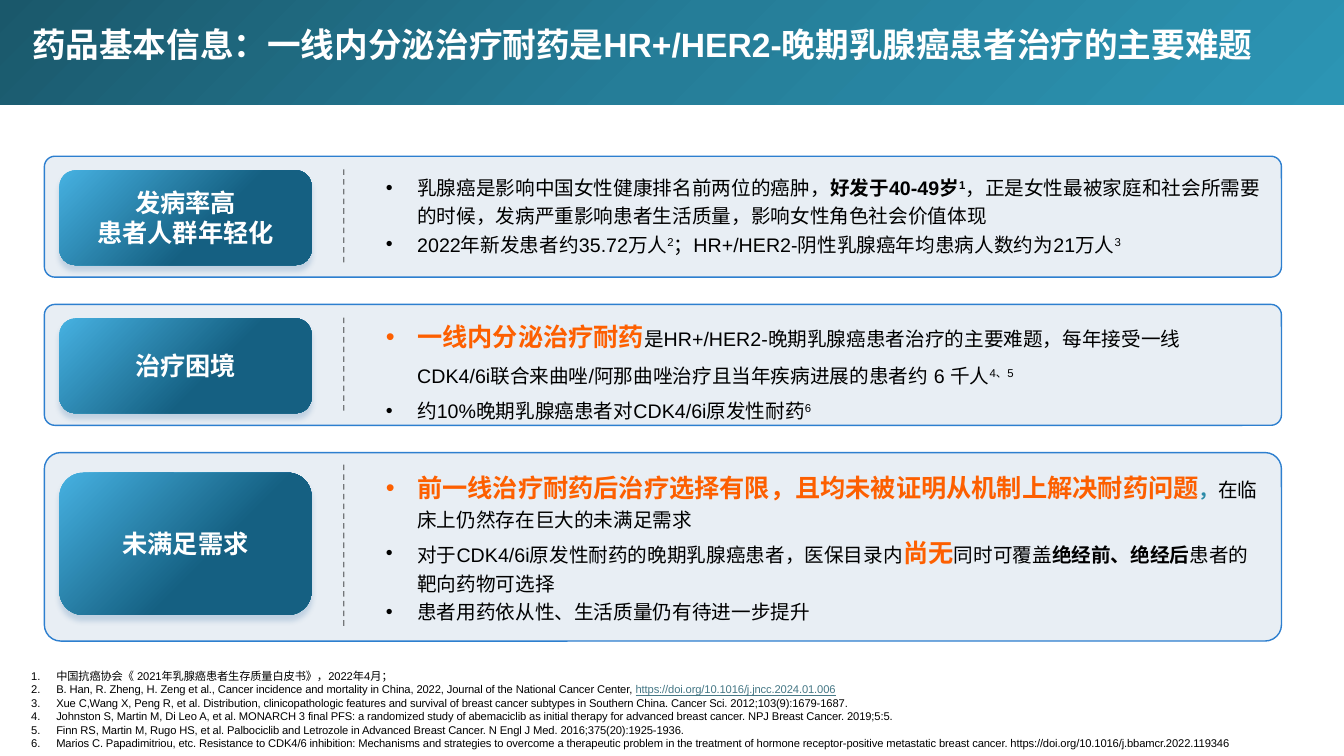
from lxml import etree
from pptx import Presentation
from pptx.dml.color import RGBColor
from pptx.enum.dml import MSO_LINE
from pptx.enum.lang import MSO_LANGUAGE_ID as Language
from pptx.enum.shapes import MSO_CONNECTOR as Connector, MSO_SHAPE as Shape
from pptx.enum.text import MSO_ANCHOR as Anchor, MSO_AUTO_SIZE as AutoSize, PP_ALIGN as Align
from pptx.oxml.ns import qn
from pptx.util import Inches, Pt


def color(value):
    return RGBColor.from_string(value)


def add_text(paragraph, text, size=14, ink="000000", bold=False, superscript=False,
             underline=False, spacing=None):
    run = paragraph.add_run()
    run.text = text
    font = run.font
    font.name, font.size, font.bold = "Arial", Pt(size), bold
    font.color.rgb = color(ink)
    font.language_id = Language.SIMPLIFIED_CHINESE
    properties = run._r.get_or_add_rPr()
    etree.SubElement(properties, qn("a:ea"), typeface="Arial")
    if underline:
        font.underline = True
    if superscript:
        properties.set("baseline", "30000")
    if spacing is not None:
        properties.set("spc", str(spacing))


bold = {"bold": True}
raised = {"superscript": True}
highlight = {"size": 18, "ink": "FD5F00", "bold": True}
badge_text = {"size": 18, "ink": "FFFFFF", "bold": True}

panels = [
    {"height": 1.2, "badge": (0.14, 0.94), "divider": (0.13, 0.94),
     "body": (1.65, 8.88, 0.92), "line_spacing": 1.2,
     "title": ["发病率高", "患者人群年轻化"],
     "points": [
         [("乳腺癌是影响中国女性健康排名前两位的癌肿，", {}), ("好发于40-49岁", bold),
          ("1", {**bold, **raised}),
          ("，正是女性最被家庭和社会所需要的时候，发病严重影响患者生活质量，影响女性角色社会价值体现", {})],
         [("2022年新发患者约35.72万人", {}), ("2", raised),
          ("；HR+/HER2-阴性乳腺癌年均患病人数约为21万人", {}), ("3", raised)]]},
    {"height": 1.2, "badge": (0.14, 0.94), "divider": (0.13, 0.94),
     "body": (2.99, 8.74, 1.22), "line_spacing": 1.5,
     "title": ["治疗困境"],
     "points": [
         [("一线内分泌治疗耐药", highlight),
          ("是HR+/HER2-晚期乳腺癌患者治疗的主要难题，每年接受一线CDK4/6i联合来曲唑/阿那曲唑治疗"
           "且当年疾病进展的患者约 6 千人", {}), ("4、5", raised)],
         [("约10%晚期乳腺癌患者对CDK4/6i原发性耐药", {}), ("6", raised)]]},
    {"height": 1.87, "badge": (0.2, 1.41), "divider": (0.12, 1.61),
     "body": (4.58, 8.88, 1.65), "line_spacing": 1.2,
     "title": ["未满足需求"],
     "points": [
         [("前一线治疗耐药后治疗选择有限，且均未被证明从机制上解决耐药问题", highlight),
          ("，", {"ink": "2B8BA8", "bold": True}), ("在临床上仍然存在巨大的未满足需求", {})],
         [("对于CDK4/6i原发性耐药的晚期乳腺癌患者，医保目录内", {}), ("尚无", highlight),
          ("同时可覆盖", {}), ("绝经前、绝经后", bold), ("患者的靶向药物可选择", {})],
         [("患者用药依从性、生活质量仍有待进一步提升", {})]]},
]
references = [
    [("中国抗癌协会《 2021年乳腺癌患者生存质量白皮书》，2022年4月；", {})],
    [("B. Han, R. Zheng, H. Zeng et al., Cancer incidence and mortality in China, 2022, "
      "Journal of the National Cancer Center, ", {}),
     ("https://doi.org/10.1016/j.jncc.2024.01.006", {"ink": "467886", "underline": True})],
    [("Xue C,Wang X, Peng R, et al. Distribution, clinicopathologic features and survival of breast "
      "cancer subtypes in Southern China. Cancer Sci. 2012;103(9):1679-1687.", {})],
    [("Johnston S, Martin M, Di Leo A, et al. MONARCH 3 final PFS: a randomized study of abemaciclib "
      "as initial therapy for advanced breast cancer. NPJ Breast Cancer. 2019;5:5. ", {})],
    [("Finn RS, Martin M, Rugo HS, et al. Palbociclib and Letrozole in Advanced Breast Cancer. "
      "N Engl J Med. 2016;375(20):1925-1936.", {})],
    [("Marios C. Papadimitriou, etc. Resistance to CDK4/6 inhibition: Mechanisms and strategies to "
      "overcome a therapeutic problem in the treatment of hormone receptor-positive metastatic breast "
      "cancer. https://doi.org/10.1016/j.bbamcr.2022.119346", {})],
]

presentation = Presentation()
presentation.slide_width, presentation.slide_height = Inches(13.33), Inches(7.5)
slide = presentation.slides.add_slide(presentation.slide_layouts[6])
shapes = slide.shapes

header = shapes.add_shape(Shape.RECTANGLE, 0, 0, Inches(13.33), Inches(1.04))
header.shadow.inherit = False
gradients = [(header, [(0, "1A586B"), (50, "257D98"), (100, "2C95B4")])]

title = shapes.add_textbox(Inches(0.22), Inches(0.1), Inches(12.88), Inches(0.73))
title.text_frame.word_wrap = True
title.text_frame.vertical_anchor = Anchor.MIDDLE
paragraph = title.text_frame.paragraphs[0]
paragraph.line_spacing = 0.9
add_text(paragraph, "药品基本信息：一线内分泌治疗耐药是HR+/HER2-晚期乳腺癌患者治疗的主要难题",
         size=24, ink="FFFFFF", bold=True)

lists = [{"box": (0.21, 6.59, 13.01, 0.91), "items": references, "indent": 0.25,
          "line_spacing": 1, "align": Align.JUSTIFY, "bullet": ("a:buAutoNum", {"type": "arabicPeriod"}),
          "format": {"size": 8, "spacing": -10}}]

for index, panel in enumerate(panels):
    top = 1.55 + 1.47 * index
    frame = shapes.add_shape(Shape.ROUNDED_RECTANGLE, Inches(0.44), Inches(top),
                             Inches(12.27), Inches(panel["height"]))
    frame.adjustments[0] = 0.087
    frame.shadow.inherit = False
    frame.fill.solid()
    frame.fill.fore_color.rgb = color("215F9A")
    frame.line.color.rgb = color("2D7FCF")
    frame.line.width = Pt(1)
    fill_color = frame.fill._xPr.find(qn("a:solidFill"))[0]
    etree.SubElement(fill_color, qn("a:alpha"), val="10000")

    offset, height = panel["badge"]
    badge = shapes.add_shape(Shape.ROUNDED_RECTANGLE, Inches(0.59), Inches(top + offset),
                             Inches(2.5), Inches(height))
    badge.shadow.inherit = False
    effects = badge._element.spPr.find(qn("a:effectLst"))
    shadow = etree.SubElement(effects, qn("a:outerShdw"), blurRad=str(Pt(4)), dist=str(Pt(4)),
                              dir="5400000", algn="t", rotWithShape="0")
    shadow_color = etree.SubElement(shadow, qn("a:srgbClr"), val="215F9A")
    etree.SubElement(shadow_color, qn("a:alpha"), val="20000")
    gradients.append((badge, [(0, "46B1E1"), (60, "156082")]))
    badge.text_frame.vertical_anchor = Anchor.MIDDLE
    for number, line in enumerate(panel["title"]):
        paragraph = badge.text_frame.add_paragraph() if number else badge.text_frame.paragraphs[0]
        paragraph.alignment = Align.CENTER
        add_text(paragraph, line, **badge_text)

    offset, height = panel["divider"]
    divider = shapes.add_connector(Connector.STRAIGHT, Inches(3.41), Inches(top + offset),
                                   Inches(3.41), Inches(top + offset + height))
    divider.line.color.rgb = color("000000")
    divider.line.width = Pt(1)
    divider.line.dash_style = MSO_LINE.DASH
    line_color = divider.line._ln.find(qn("a:solidFill"))[0]
    etree.SubElement(line_color, qn("a:alpha"), val="50000")
    etree.SubElement(divider._element.spPr, qn("a:effectLst"))

    lists.append({"box": (3.73, *panel["body"]), "items": panel["points"], "indent": 0.31,
                  "line_spacing": panel["line_spacing"], "align": Align.LEFT,
                  "bullet": ("a:buChar", {"char": "•"}), "format": {}})

for shape, stops in gradients:
    shape.line.fill.background()
    shape.fill.gradient()
    gradient = shape.fill._xPr.find(qn("a:gradFill"))
    gradient.find(qn("a:lin")).set("ang", "2700000")
    stop_list = gradient.find(qn("a:gsLst"))
    for stop in list(stop_list):
        stop_list.remove(stop)
    for position, value in stops:
        stop = etree.SubElement(stop_list, qn("a:gs"), pos=str(position * 1000))
        etree.SubElement(stop, qn("a:srgbClr"), val=value)

for group in lists:
    box = shapes.add_textbox(*[Inches(length) for length in group["box"]])
    text_frame = box.text_frame
    text_frame.word_wrap = True
    text_frame.auto_size = AutoSize.SHAPE_TO_FIT_TEXT
    for number, item in enumerate(group["items"]):
        paragraph = text_frame.add_paragraph() if number else text_frame.paragraphs[0]
        paragraph.alignment = group["align"]
        paragraph.line_spacing = float(group["line_spacing"])
        properties = paragraph._p.get_or_add_pPr()
        properties.set("marL", str(Inches(group["indent"])))
        properties.set("indent", str(-Inches(group["indent"])))
        etree.SubElement(properties, qn("a:buFont"), typeface="Arial")
        tag, attributes = group["bullet"]
        etree.SubElement(properties, qn(tag), **attributes)
        for text, style in item:
            add_text(paragraph, text, **{**group["format"], **style})

presentation.save("out.pptx")
